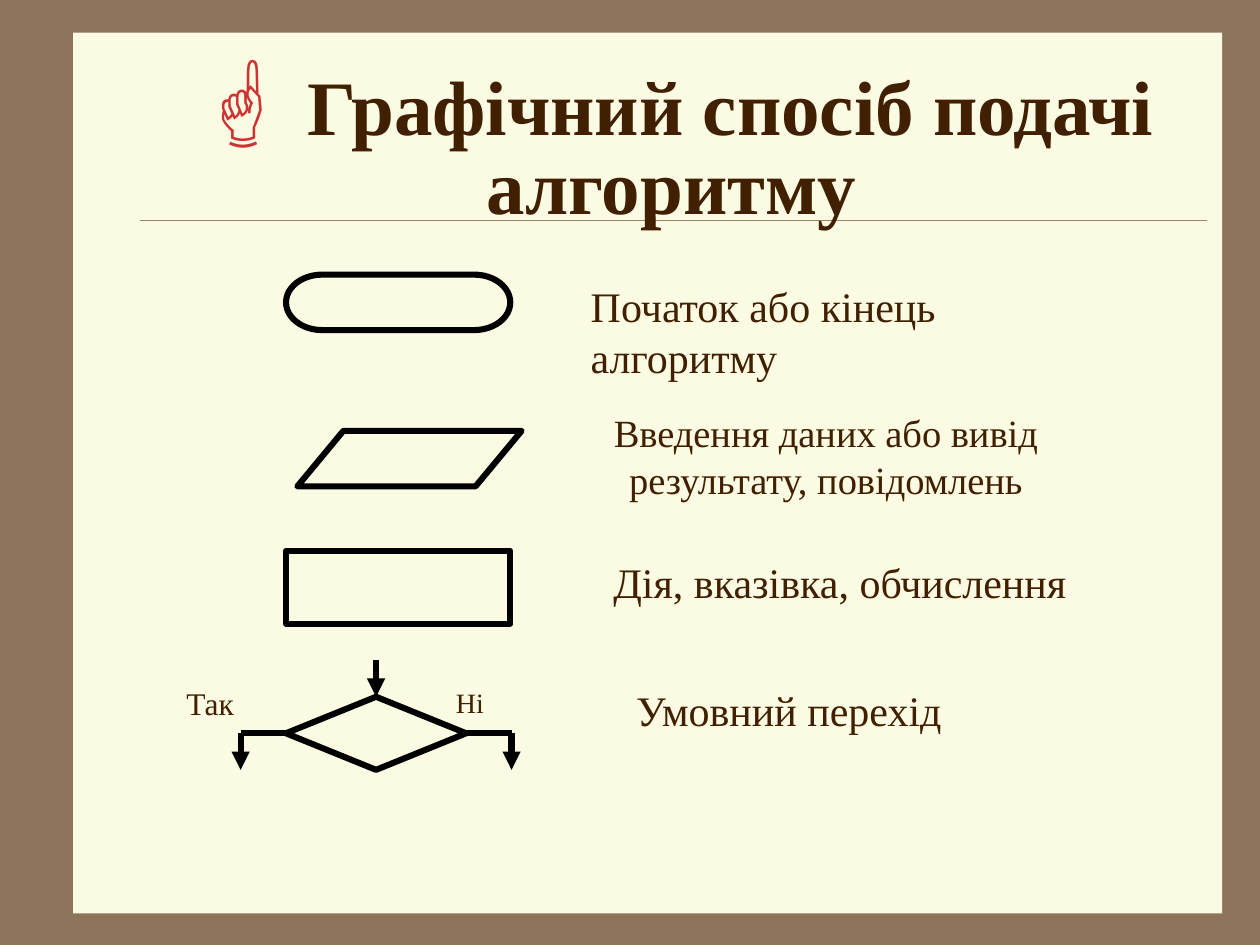
from pptx import Presentation
from pptx.dml.color import RGBColor
from pptx.enum import shapes, text
from pptx.oxml import parse_xml
from pptx.oxml import ns
from pptx.util import Inches, Pt

COLORS = {
    "frame": "8C735A",
    "panel": "FBFAE2",
    "rule": "A08366",
    "text": "402000",
    "hand": "CD3333",
    "outline": "000000",
}
FONT = "Times New Roman"
SYMBOL_LEFT, SYMBOL_WIDTH = 2.27, 1.78
BRANCH_Y, ARROW_LENGTH = 5.82, 0.29


def color(name):
    """Return the named palette colour."""
    return RGBColor.from_string(COLORS[name])


def add_run(paragraph, content, size, color_name="text", bold=False):
    """Add a formatted run to a paragraph."""
    run = paragraph.add_run()
    run.text = content
    run.font.name = FONT
    run.font.size = Pt(size)
    run.font.bold = bold
    run.font.color.rgb = color(color_name)


def add_label(slide, content, left, top, width, height, size=24, align=text.PP_ALIGN.LEFT):
    """Add a wrapped text box."""
    box = slide.shapes.add_textbox(Inches(left), Inches(top), Inches(width), Inches(height))
    box.text_frame.word_wrap = True
    paragraph = box.text_frame.paragraphs[0]
    paragraph.alignment = align
    add_run(paragraph, content, size)


def add_panel(slide):
    """Add the pale panel inside the frame."""
    panel = slide.shapes.add_shape(
        shapes.MSO_SHAPE.RECTANGLE, Inches(0.58), Inches(0.26), Inches(9.12), Inches(6.99))
    panel.shadow.inherit = False
    panel.fill.solid()
    panel.fill.fore_color.rgb = color("panel")
    panel.line.fill.background()


def add_symbol(slide, kind, top, left=SYMBOL_LEFT, width=SYMBOL_WIDTH, height=0.58):
    """Add an outlined flowchart symbol."""
    symbol = slide.shapes.add_shape(kind, Inches(left), Inches(top), Inches(width), Inches(height))
    symbol.shadow.inherit = False
    symbol.fill.background()
    symbol.line.color.rgb = color("outline")
    symbol.line.width = Pt(3.5)
    return symbol


def add_line(slide, start, end, color_name="outline", width=3.5, arrow=False):
    """Add a straight connector with an optional arrowhead."""
    points = [Inches(value) for value in (*start, *end)]
    connector = slide.shapes.add_connector(shapes.MSO_CONNECTOR.STRAIGHT, *points)
    connector.line.color.rgb = color(color_name)
    connector.line.width = Pt(width)
    if arrow:
        line = connector.line._get_or_add_ln()
        line.append(parse_xml(f'<a:tailEnd {ns.nsdecls("a")} type="triangle"/>'))
    connector._element.spPr.append(parse_xml(f'<a:effectLst {ns.nsdecls("a")}/>'))
    return connector


def add_title(slide):
    """Fill the title placeholder and bring it in front of the panel."""
    title = slide.shapes.title
    title.left, title.top = Inches(1.08), Inches(0.5)
    title.width, title.height = Inches(8.5), Inches(1.25)
    frame = title.text_frame
    frame.auto_size = text.MSO_AUTO_SIZE.NONE
    frame.vertical_anchor = text.MSO_ANCHOR.MIDDLE
    paragraph = frame.paragraphs[0]
    paragraph.alignment = text.PP_ALIGN.CENTER
    paragraph.line_spacing = 0.8
    add_run(paragraph, "☝", 60, "hand", bold=True)
    add_run(paragraph, " Графічний спосіб подачі алгоритму", 44, bold=True)
    title.element.getparent().append(title.element)


def add_branching(slide):
    """Add the decision diamond with its entry and two exits."""
    left, width = SYMBOL_LEFT, 1.43
    decision = add_symbol(slide, shapes.MSO_SHAPE.FLOWCHART_DECISION, 5.53, width=width)
    for site, side_x, corner_x in ((1, left, 1.91), (3, left + width, 4.06)):
        corner = (corner_x, BRANCH_Y)
        add_line(slide, (side_x, BRANCH_Y), corner).begin_connect(decision, site)
        add_line(slide, corner, (corner_x, BRANCH_Y + ARROW_LENGTH), arrow=True)
    middle = left + width / 2
    entry = add_line(slide, (middle, 5.53 - ARROW_LENGTH), (middle, 5.53), arrow=True)
    entry.end_connect(decision, 0)
    add_label(slide, "Так", 1.38, 5.38, 1.25, 0.44, size=18)
    add_label(slide, "Ні", 3.52, 5.39, 1.25, 0.44, size=16)


def main():
    """Build and save the slide."""
    presentation = Presentation()
    presentation.slide_width, presentation.slide_height = Inches(10), Inches(7.5)
    slide = presentation.slides.add_slide(presentation.slide_layouts[5])
    slide.background.fill.solid()
    slide.background.fill.fore_color.rgb = color("frame")

    add_panel(slide)
    add_line(slide, (1.11, 1.75), (9.58, 1.75), "rule", 0.25)
    add_title(slide)

    add_symbol(slide, shapes.MSO_SHAPE.FLOWCHART_TERMINATOR, 2.18, height=0.44)
    data = add_symbol(slide, shapes.MSO_SHAPE.PARALLELOGRAM, 3.42, left=2.36, height=0.44)
    data.adjustments[0] = 0.83
    add_symbol(slide, shapes.MSO_SHAPE.FLOWCHART_PROCESS, 4.37)
    add_branching(slide)

    add_label(slide, "Початок або кінець алгоритму", 4.59, 2.18, 3.93, 1.02)
    add_label(slide, "Введення даних або вивід результату, повідомлень",
              4.59, 3.2, 3.93, 1.17, size=22, align=text.PP_ALIGN.CENTER)
    add_label(slide, "Дія, вказівка, обчислення", 4.77, 4.37, 4.46, 0.58)
    add_label(slide, "Умовний перехід", 4.95, 5.38, 4.46, 0.44)
    presentation.save("out.pptx")


if __name__ == "__main__":
    main()
